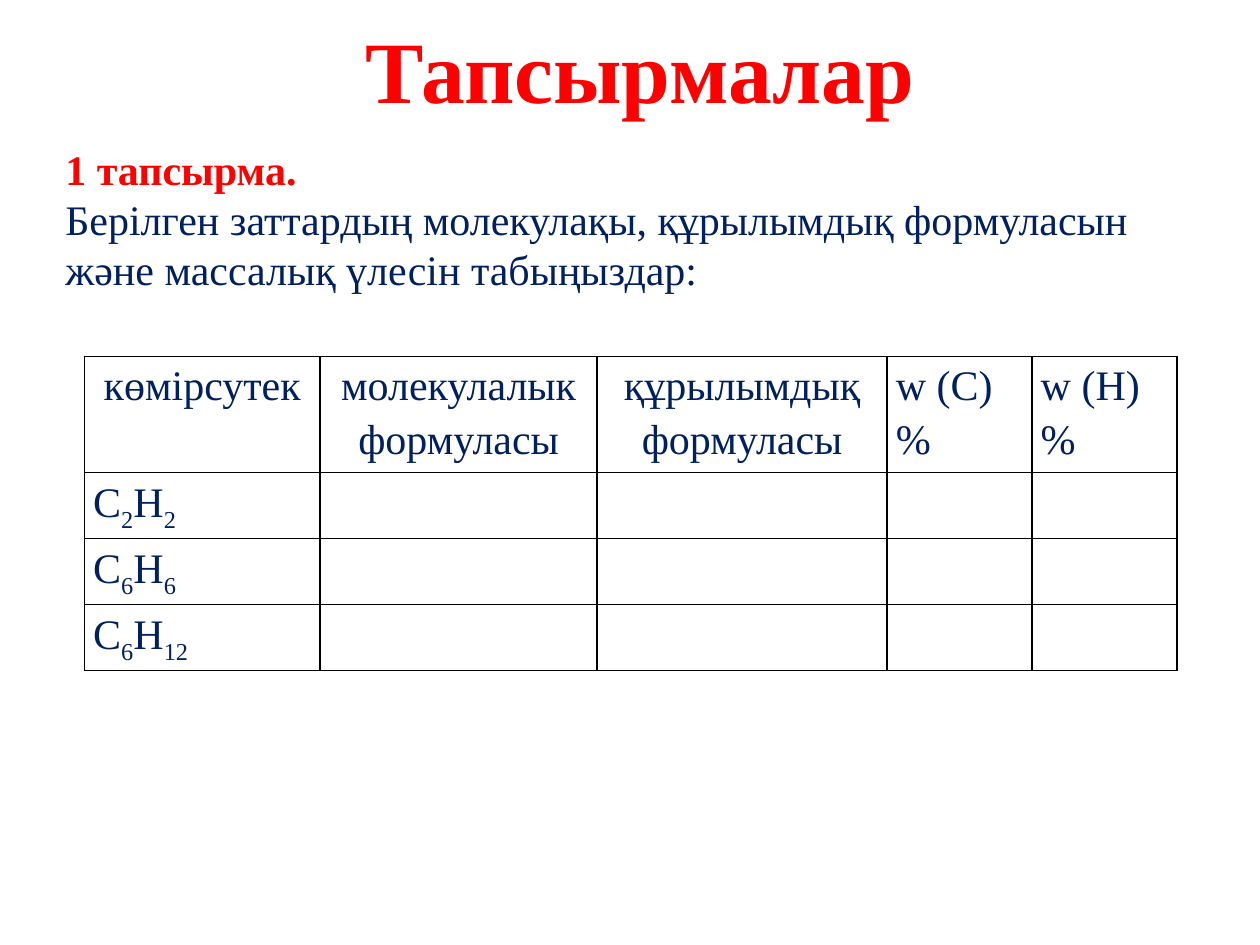
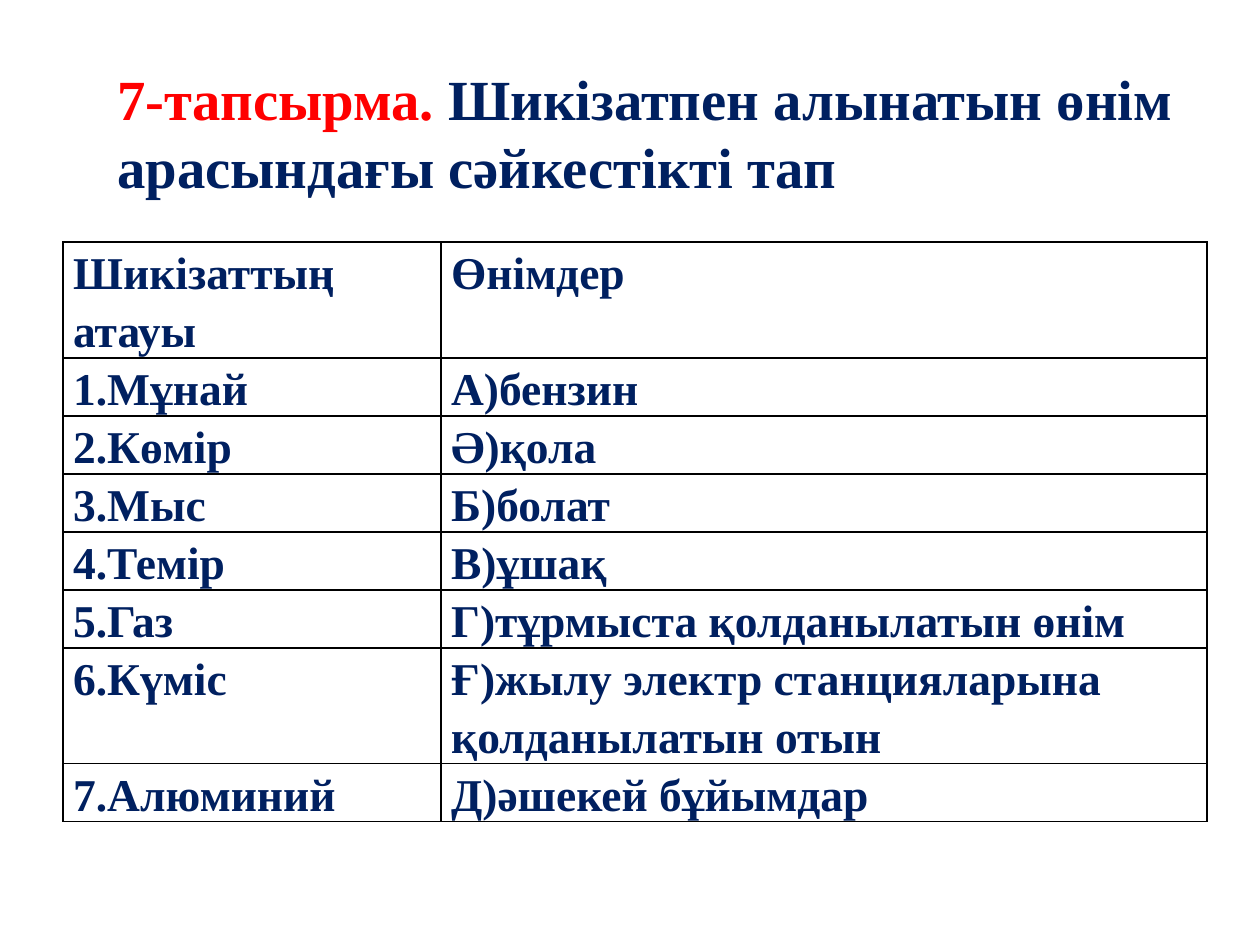
from dataclasses import dataclass

from lxml import etree
from pptx import Presentation
from pptx.dml.color import RGBColor
from pptx.enum.text import MSO_ANCHOR as Anchor, MSO_AUTO_SIZE as AutoSize, PP_ALIGN as Align
from pptx.oxml.ns import qn
from pptx.util import Inches, Pt

# Shared style
COLORS = {"red": "FF0000", "navy": "002060", "black": "000000", "white": "FFFFFF"}
FONT = "Times New Roman"
TITLE_ONLY = 5
CELL_LINE_SPACING = 1.15
BORDER_WIDTH = Pt(1)


@dataclass
class Span:
    text: str
    color: str = "navy"
    bold: bool = False
    subscript: bool = False


@dataclass
class Area:
    left: float
    top: float
    width: float
    height: float

    def place(self, shape) -> None:
        shape.left, shape.top = Inches(self.left), Inches(self.top)
        shape.width, shape.height = Inches(self.width), Inches(self.height)


@dataclass
class Grid:
    left: float
    top: float
    columns: list[float]
    heights: list[float]
    rows: list[list[list[Span]]]
    size: float
    inset: float
    centered_headings: int = 0
    space_after: float = 0
    fill: str | None = None


# Text
def add_spans(para, spans: list[Span], size: float) -> None:
    for span in spans:
        run = para.add_run()
        run.text = span.text
        run.font.name = FONT
        run.font.size = Pt(size)
        run.font.bold = span.bold
        run.font.color.rgb = RGBColor.from_string(COLORS[span.color])
        if span.subscript:
            run.font._element.set("baseline", "-25000")


def add_titled_slide(deck, area: Area, spans: list[Span], size: float, align: Align):
    page = deck.slides.add_slide(deck.slide_layouts[TITLE_ONLY])
    title = page.shapes.title
    area.place(title)
    frame = title.text_frame
    frame.word_wrap = True
    frame.auto_size = AutoSize.NONE
    frame.vertical_anchor = Anchor.MIDDLE
    frame.paragraphs[0].alignment = align
    add_spans(frame.paragraphs[0], spans, size)
    return page


def add_text(page, area: Area, paragraphs: list[list[Span]], size: float) -> None:
    box = page.shapes.add_textbox(0, 0, 0, 0)
    area.place(box)
    frame = box.text_frame
    frame.word_wrap = True
    frame.auto_size = AutoSize.SHAPE_TO_FIT_TEXT
    frame.vertical_anchor = Anchor.MIDDLE
    for index, spans in enumerate(paragraphs):
        para = frame.add_paragraph() if index else frame.paragraphs[0]
        add_spans(para, spans, size)


# Tables
def add_borders(cell) -> None:
    properties = cell._tc.get_or_add_tcPr()
    for index, side in enumerate(("lnL", "lnR", "lnT", "lnB")):
        line = etree.Element(qn(f"a:{side}"), w=str(BORDER_WIDTH))
        paint = etree.SubElement(line, qn("a:solidFill"))
        etree.SubElement(paint, qn("a:srgbClr"), val=COLORS["black"])
        properties.insert(index, line)


def format_cell(cell, grid: Grid) -> None:
    cell.margin_left = cell.margin_right = Inches(grid.inset)
    cell.margin_top = cell.margin_bottom = 0
    if grid.fill:
        cell.fill.solid()
        cell.fill.fore_color.rgb = RGBColor.from_string(COLORS[grid.fill])
    else:
        cell.fill.background()
    add_borders(cell)


def add_grid(page, grid: Grid) -> None:
    frame = page.shapes.add_table(
        len(grid.rows), len(grid.columns), Inches(grid.left), Inches(grid.top),
        Inches(sum(grid.columns)), Inches(sum(grid.heights)))
    table = frame.table
    table.first_row = table.horz_banding = False
    for column, width in zip(table.columns, grid.columns):
        column.width = Inches(width)
    for row, height in zip(table.rows, grid.heights):
        row.height = Inches(height)
    for row_index, row in enumerate(grid.rows):
        for column_index, spans in enumerate(row):
            cell = table.cell(row_index, column_index)
            format_cell(cell, grid)
            if not spans:
                continue
            para = cell.text_frame.paragraphs[0]
            para.line_spacing = CELL_LINE_SPACING
            para.space_after = Pt(grid.space_after)
            if row_index == 0 and column_index < grid.centered_headings:
                para.alignment = Align.CENTER
            add_spans(para, spans, grid.size)


def formula(carbon: int, hydrogen: int) -> list[Span]:
    return [Span("С"), Span(str(carbon), subscript=True),
            Span("Н"), Span(str(hydrogen), subscript=True)]


# Slide 1: hydrocarbon formulas
def build_formula_task(deck) -> None:
    page = add_titled_slide(deck, Area(0.58, 0, 9, 1.08),
                            [Span("Тапсырмалар", "red", True)], 50, Align.CENTER)
    add_text(page, Area(0.42, 1.08, 9.08, 1.31), [
        [Span("1 тапсырма.", "red", True)],
        [Span("Берілген заттардың молекулақы, құрылымдық формуласын "
              "және массалық үлесін табыңыздар:")],
    ], 24)
    headings = ["көмірсутек", "молекулалык формуласы", "құрылымдық формуласы",
                "w (C)%", "w (H)%"]
    hydrocarbons = [(2, 2), (6, 6), (6, 12)]
    blanks = [[] for _ in headings[1:]]
    add_grid(page, Grid(
        left=0.67, top=2.83, columns=[1.87, 2.2, 2.3, 1.15, 1.15],
        heights=[0.92] + [0.52] * len(hydrocarbons),
        rows=[[[Span(text)] for text in headings]]
        + [[formula(*atoms), *blanks] for atoms in hydrocarbons],
        size=24, inset=0.07, centered_headings=3))


# Slide 2: matching raw materials and products
def build_matching_task(deck) -> None:
    page = add_titled_slide(deck, Area(0.83, 0.42, 8.58, 1.25), [
        Span("7-тапсырма. ", "red", True),
        Span("Шикізатпен алынатын өнім арасындағы сәйкестікті тап", bold=True),
    ], 32.4, Align.LEFT)
    pairs = [
        ("Шикізаттың атауы", "Өнімдер"),
        ("1.Мұнай", "А)бензин"),
        ("2.Көмір", "Ә)қола"),
        ("3.Мыс", "Б)болат"),
        ("4.Темір", "В)ұшақ"),
        ("5.Газ", "Г)тұрмыста қолданылатын өнім"),
        ("6.Күміс", "Ғ)жылу электр станцияларына қолданылатын отын"),
        ("7.Алюминий", "Д)әшекей бұйымдар"),
    ]
    two_line_rows = {0, 6}
    add_grid(page, Grid(
        left=0.5, top=1.92, columns=[3, 6.08],
        heights=[0.92 if index in two_line_rows else 0.46 for index in range(len(pairs))],
        rows=[[[Span(text, bold=True)] for text in pair] for pair in pairs],
        size=26, inset=0.08, space_after=5.7, fill="white"))


def main() -> None:
    deck = Presentation()
    deck.slide_width, deck.slide_height = Inches(10), Inches(7.5)
    build_formula_task(deck)
    build_matching_task(deck)
    deck.save("out.pptx")


if __name__ == "__main__":
    main()
